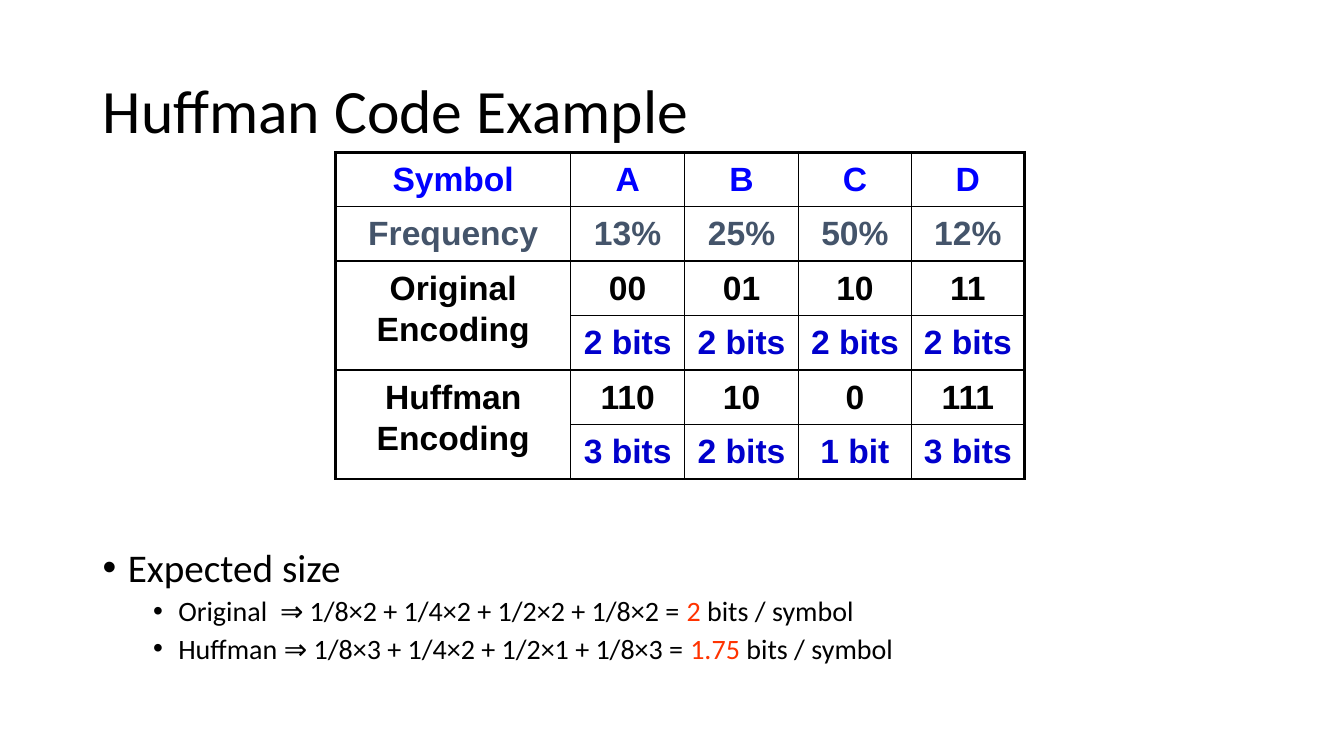
"""Build the Huffman code example slide."""
import pptx
import pptx.util
import pptx.dml.color
import pptx.enum.text
import pptx.oxml
import pptx.oxml.ns
from lxml import etree
from pptx.util import Inches

THEME = {
    "black": "000000", "blue": "0000FF", "slate": "44546A",
    "navy": "0000CC", "red": "FF3300",
    "body_font": "Calibri", "table_font": "Arial",
    "title": 44, "level1": 28, "level2": 20, "cell": 24,
    "outer": 2.25, "inner": 1,
}
QN = pptx.oxml.ns.qn


def add_text(p, text, size, color="black", font="body_font", bold=False):
    """Append a formatted run to a paragraph."""
    r = p.add_run()
    r.text = text
    r.font.size = pptx.util.Pt(THEME[size])
    r.font.name = THEME[font]
    r.font.bold = bold
    r.font.color.rgb = pptx.dml.color.RGBColor.from_string(THEME[color])


def add_border(tc_pr, edge, width):
    """Append one solid border line to a cell."""
    ln = etree.SubElement(tc_pr, QN("a:" + edge), w=str(pptx.util.Pt(width)))
    fill = etree.SubElement(ln, QN("a:solidFill"))
    etree.SubElement(fill, QN("a:srgbClr"), val=THEME["black"])


prs = pptx.Presentation()
prs.slide_width, prs.slide_height = Inches(13.33), Inches(7.5)
s = prs.slides.add_slide(prs.slide_layouts[6])

tf = s.shapes.add_textbox(Inches(0.92), Inches(0.4), Inches(11.5), Inches(1.45)).text_frame
tf.word_wrap = True
tf.vertical_anchor = pptx.enum.text.MSO_ANCHOR.MIDDLE
tf.paragraphs[0].line_spacing = 0.9
add_text(tf.paragraphs[0], "Huffman Code Example", "title")

bullets = [
    ("level1", 0.25, 0, [("Expected size", "black")]),
    ("level2", 0.75, 5, [("Original  ⇒ 1/8×2 + 1/4×2 + 1/2×2 + 1/8×2 = ", "black"),
                         ("2", "red"), (" bits / symbol", "black")]),
    ("level2", 0.75, 5, [("Huffman ⇒ 1/8×3 + 1/4×2 + 1/2×1 + 1/8×3 = ", "black"),
                         ("1.75", "red"), (" bits / symbol", "black")]),
]
tf = s.shapes.add_textbox(Inches(0.92), Inches(5.39), Inches(11.5), Inches(1.37)).text_frame
tf.word_wrap = True
for i, (size, margin, before, runs) in enumerate(bullets):
    p = tf.add_paragraph() if i else tf.paragraphs[0]
    p.level = 1 if size == "level2" else 0
    p.line_spacing = 0.9
    p.space_before = pptx.util.Pt(before)
    p_pr = p._p.get_or_add_pPr()
    p_pr.set("marL", str(Inches(margin)))
    p_pr.set("indent", str(Inches(-0.25)))
    etree.SubElement(p_pr, QN("a:buFont"), typeface="Arial")
    etree.SubElement(p_pr, QN("a:buChar"), char="•")
    for text, color in runs:
        add_text(p, text, size, color)

rows = [
    ("blue", ["Symbol", "A", "B", "C", "D"]),
    ("slate", ["Frequency", "13%", "25%", "50%", "12%"]),
    ("black", ["Original Encoding", "00", "01", "10", "11"]),
    ("navy", ["", "2 bits", "2 bits", "2 bits", "2 bits"]),
    ("black", ["Huffman Encoding", "110", "10", "0", "111"]),
    ("navy", ["", "3 bits", "2 bits", "1 bit", "3 bits"]),
]
widths = [2.33, 1.13, 1.13, 1.12, 1.12]
table = s.shapes.add_table(len(rows), len(widths), Inches(3.33), Inches(1.51),
                           Inches(sum(widths)), Inches(0.51 * len(rows))).table
table.first_row = table.horz_banding = False
for column, width in zip(table.columns, widths):
    column.width = Inches(width)
for top in (2, 4):
    table.cell(top, 0).merge(table.cell(top + 1, 0))

for i, (color, texts) in enumerate(rows):
    table.rows[i].height = Inches(0.51)
    for j, text in enumerate(texts):
        cell = table.cell(i, j)
        bottom = i + (cell.span_height if cell.is_merge_origin else 1)
        outside = {"lnL": j == 0, "lnR": j == len(widths) - 1,
                   "lnT": i == 0, "lnB": bottom == len(rows)}
        tc_pr = cell._tc.get_or_add_tcPr()
        for edge, is_outer in outside.items():
            add_border(tc_pr, edge, THEME["outer" if is_outer else "inner"])
        cell.fill.background()
        if text:
            p = cell.text_frame.paragraphs[0]
            p.alignment = pptx.enum.text.PP_ALIGN.CENTER
            p.line_spacing = 1.1
            add_text(p, text, "cell", color, "table_font", True)

prs.save("out.pptx")
